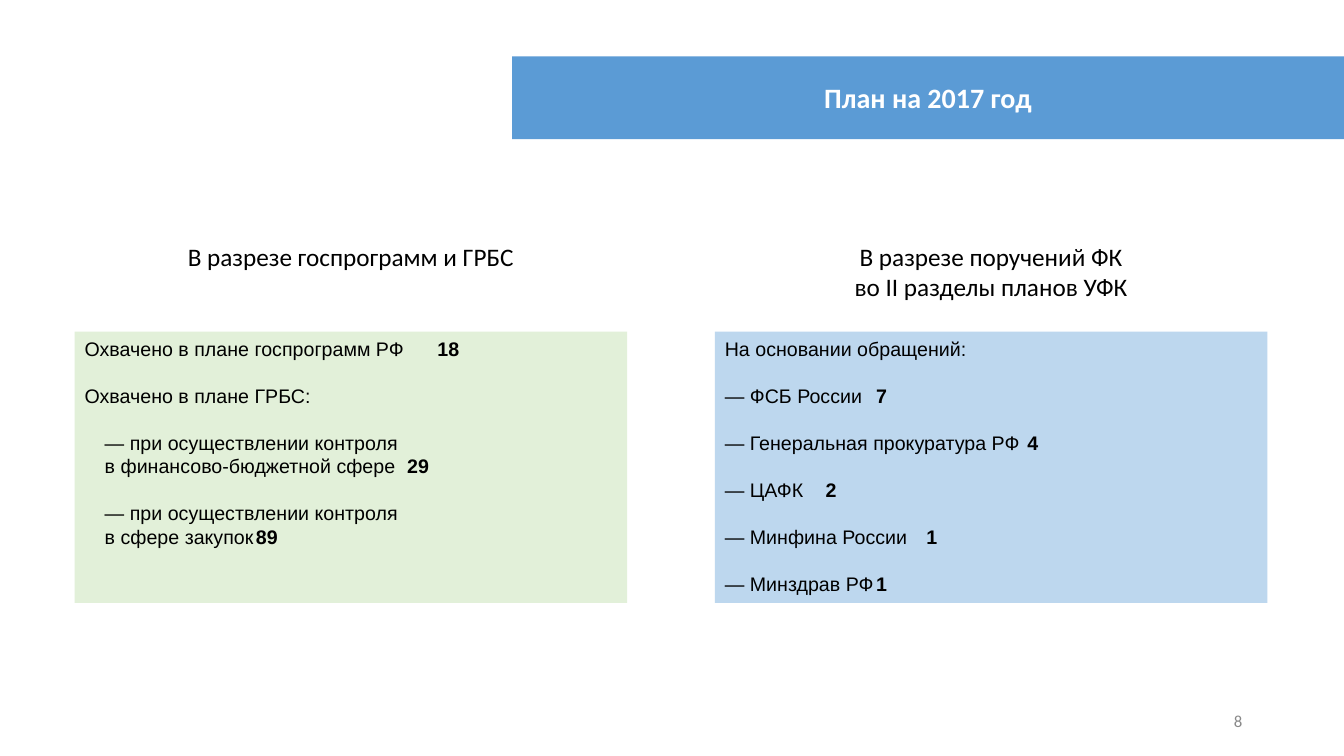
"""Build the slide with the audit plan for 2017."""
from lxml.etree import SubElement
from pptx import Presentation
from pptx.dml.color import RGBColor
from pptx.enum.shapes import MSO_SHAPE
from pptx.enum.text import MSO_ANCHOR, PP_ALIGN
from pptx.oxml.ns import qn
from pptx.util import Inches, Pt

TITLE = "План на 2017 год"
PAGE = "8"
HEADS = [
    ["В разрезе госпрограмм и ГРБС"],
    ["В разрезе поручений ФК", "во II разделы планов УФК"],
]
PANELS = [
    ("green", [
        (0, ["Охвачено в плане госпрограмм РФ"], "18"),
        (0, ["Охвачено в плане ГРБС:"], ""),
        (0.2, ["— при осуществлении контроля", "в финансово-бюджетной сфере"], "29"),
        (0.2, ["— при осуществлении контроля", "в сфере закупок"], "89"),
    ]),
    ("pale", [
        (0, ["На основании обращений:"], ""),
        (0, ["— ФСБ России"], "7"),
        (0, ["— Генеральная прокуратура РФ"], "4"),
        (0, ["— ЦАФК"], "2"),
        (0, ["— Минфина России"], "1"),
        (0, ["— Минздрав РФ"], "1"),
    ]),
]
COLORS = {"blue": "5B9BD5", "green": "E2F0D9", "pale": "BDD7EE",
          "white": "FFFFFF", "black": "000000", "gray": "898989"}
WIDE, HIGH = 13.33, 7.5
LEFT, STEP, PANEL = 0.74, 6.35, 5.48
HEAD = 6.67
TAB, LINE = 5, 16.8


def paint(font, size, name, color, bold=False):
    font.size, font.name, font.bold = Pt(size), name, bold
    font.color.rgb = RGBColor.from_string(COLORS[color])


def add_box(slide, color, *area):
    box = slide.shapes.add_shape(MSO_SHAPE.RECTANGLE, *map(Inches, area))
    box.shadow.inherit = False
    box.fill.solid()
    box.fill.fore_color.rgb = RGBColor.from_string(COLORS[color])
    box.line.fill.background()
    box.text_frame.word_wrap = True
    return box.text_frame


def add_label(slide, *area):
    frame = slide.shapes.add_textbox(*map(Inches, area)).text_frame
    frame.word_wrap = True
    return frame


def write(frame, lines, align, size, color, bold=False):
    frame.text = "\n".join(lines)
    for para in frame.paragraphs:
        para.alignment = align
        for run in para.runs:
            paint(run.font, size, "Calibri", color, bold)


def add_row(para, text, value, indent, gap):
    para.alignment = PP_ALIGN.LEFT
    para.line_spacing = Pt(LINE)
    if gap:
        para.space_before = Pt(LINE)
    props = para._p.get_or_add_pPr()
    props.set("marL", str(Inches(indent)))
    props.set("indent", "0")
    if value:
        stops = SubElement(props, qn("a:tabLst"))
        SubElement(stops, qn("a:tab"), pos=str(Inches(TAB)), algn="l")
        text += "\t"
    for part, bold in ((text, False), (value, True)):
        if part:
            run = para.add_run()
            run.text = part
            paint(run.font, 14, "Arial", "black", bold)


def fill_panel(frame, items):
    frame.vertical_anchor = MSO_ANCHOR.TOP
    para = frame.paragraphs[0]
    for item, (indent, lines, value) in enumerate(items):
        for row, text in enumerate(lines):
            if item or row:
                para = frame.add_paragraph()
            last = row == len(lines) - 1
            add_row(para, text, value if last else "", indent, item and not row)


def main():
    deck = Presentation()
    deck.slide_width, deck.slide_height = Inches(WIDE), Inches(HIGH)
    slide = deck.slides.add_slide(deck.slide_layouts[6])
    banner = add_box(slide, "blue", 5.08, 0.56, WIDE - 5.08, 0.82)
    banner.vertical_anchor = MSO_ANCHOR.MIDDLE
    write(banner, [TITLE], PP_ALIGN.CENTER, 20, "white", True)
    for col, (lines, (color, items)) in enumerate(zip(HEADS, PANELS)):
        left = LEFT + col * STEP
        start = left + (PANEL - HEAD) / 2
        label = add_label(slide, start, 2.34, HEAD, 0.1 + 0.3 * len(lines))
        write(label, lines, PP_ALIGN.CENTER, 18, "black")
        fill_panel(add_box(slide, color, left, 3.29, PANEL, 2.69), items)
    page = add_label(slide, 9.42, 6.95, 3, 0.4)
    page.vertical_anchor = MSO_ANCHOR.MIDDLE
    write(page, [PAGE], PP_ALIGN.RIGHT, 12, "gray")
    deck.save("out.pptx")


if __name__ == "__main__":
    main()
